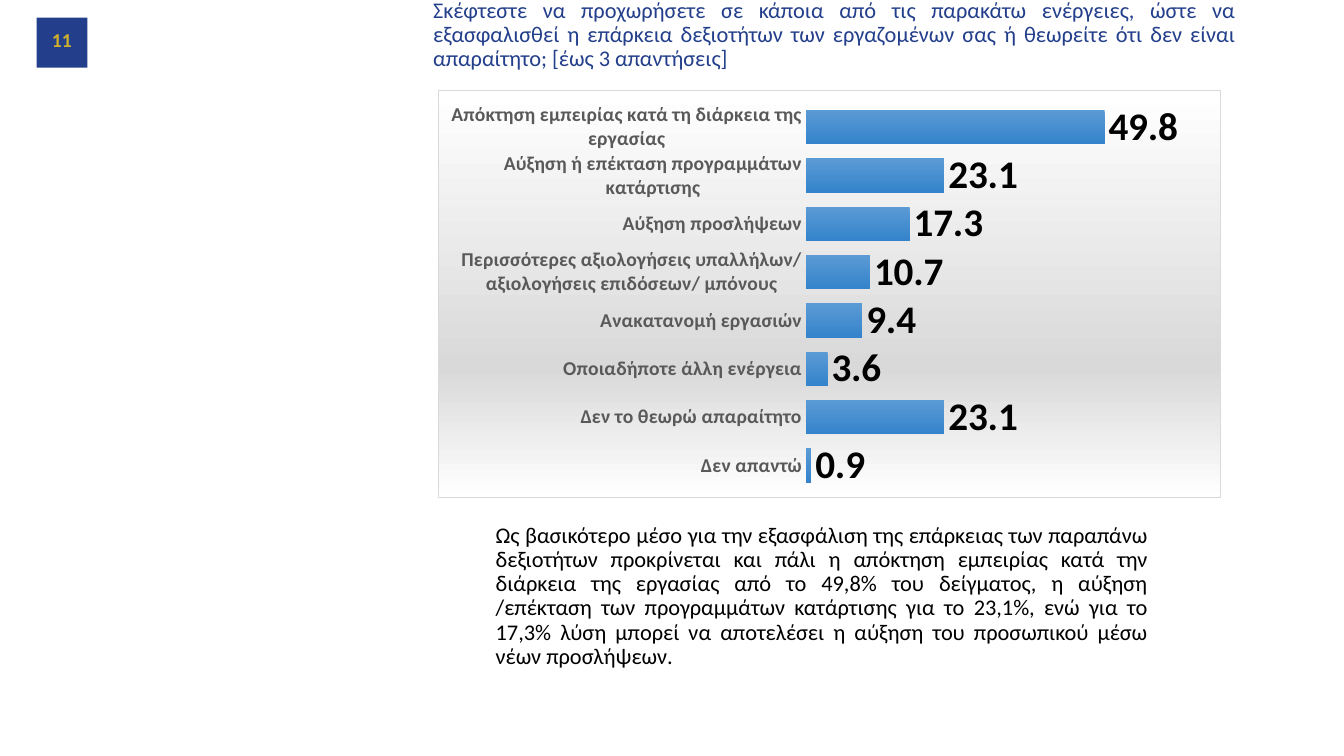
from dataclasses import dataclass

from lxml.etree import _Element
from pptx import Presentation
from pptx.chart.data import CategoryChartData
from pptx.dml.color import RGBColor
from pptx.enum.chart import XL_CHART_TYPE, XL_LABEL_POSITION, XL_TICK_MARK
from pptx.enum.shapes import MSO_SHAPE
from pptx.enum.text import MSO_ANCHOR, PP_ALIGN
from pptx.oxml import parse_xml
from pptx.oxml.ns import nsdecls, qn
from pptx.slide import Slide
from pptx.util import Pt


@dataclass(frozen=True)
class Theme:
    font: str = "Calibri"
    navy: str = "233F8C"
    gold: str = "CEB02C"
    black: str = "000000"
    axis_gray: str = "595959"
    panel_gray: str = "D9D9D9"
    white: str = "FFFFFF"
    bar_top: str = "5B9BD5"
    bar_bottom: str = "3483CB"
    text_size: float = 16
    number_size: float = 14
    chart_size: float = 10
    category_size: float = 14
    value_size: float = 28


@dataclass(frozen=True)
class Box:
    left: float
    top: float
    width: float
    height: float

    def lengths(self) -> tuple[Pt, Pt, Pt, Pt]:
        return Pt(self.left), Pt(self.top), Pt(self.width), Pt(self.height)


@dataclass(frozen=True)
class Answer:
    label: str
    percent: float


THEME = Theme()

NUMBER_SQUARE = Box(26.2, 12.7, 36.3, 35.6)
NUMBER_BOX = Box(27.4, 13.7, 31, 28.8)
TITLE_BOX = Box(302.4, 0, 587.5, 54.7)
CHART_BOX = Box(312.8, 64.4, 559.4, 291.6)
COMMENT_BOX = Box(347, 370.8, 480.2, 112.3)

TITLE = (
    "Σκέφτεστε να προχωρήσετε σε κάποια από τις παρακάτω ενέργειες, ώστε να "
    "εξασφαλισθεί η επάρκεια δεξιοτήτων των εργαζομένων σας ή θεωρείτε ότι δεν "
    "είναι απαραίτητο; [έως 3 απαντήσεις]"
)
COMMENT = (
    "Ως βασικότερο μέσο για την εξασφάλιση της επάρκειας των παραπάνω δεξιοτήτων "
    "προκρίνεται και πάλι η απόκτηση εμπειρίας κατά την διάρκεια της εργασίας από "
    "το 49,8% του δείγματος, η αύξηση /επέκταση των προγραμμάτων κατάρτισης για το "
    "23,1%, ενώ για το 17,3% λύση μπορεί να αποτελέσει η αύξηση του προσωπικού "
    "μέσω νέων προσλήψεων."
)
ANSWERS = (
    Answer("Δεν απαντώ", 0.9),
    Answer("Δεν το θεωρώ απαραίτητο", 23.1),
    Answer("Οποιαδήποτε άλλη ενέργεια", 3.6),
    Answer("Ανακατανομή εργασιών", 9.4),
    Answer("Περισσότερες αξιολογήσεις υπαλλήλων/ αξιολογήσεις επιδόσεων/ μπόνους", 10.7),
    Answer("Αύξηση προσλήψεων", 17.3),
    Answer("Αύξηση ή επέκταση προγραμμάτων κατάρτισης", 23.1),
    Answer("Απόκτηση εμπειρίας κατά τη διάρκεια της εργασίας", 49.8),
)


def format_font(font, size: float, color: str, bold: bool = False) -> None:
    font.name = THEME.font
    font.size = Pt(size)
    font.bold = bold
    font.color.rgb = RGBColor.from_string(color)


def add_text(slide: Slide, box: Box, text: str, *, size: float, color: str,
             bold: bool = False, align: PP_ALIGN = PP_ALIGN.JUSTIFY,
             anchor: MSO_ANCHOR = MSO_ANCHOR.TOP, line_spacing: float = 0.9) -> None:
    frame = slide.shapes.add_textbox(*box.lengths()).text_frame
    frame.word_wrap = True
    frame.vertical_anchor = anchor
    paragraph = frame.paragraphs[0]
    paragraph.alignment = align
    paragraph.line_spacing = line_spacing
    run = paragraph.add_run()
    run.text = text
    format_font(run.font, size, color, bold)


def add_number_square(slide: Slide) -> None:
    shape = slide.shapes.add_shape(MSO_SHAPE.RECTANGLE, *NUMBER_SQUARE.lengths())
    shape.shadow.inherit = False
    shape.fill.solid()
    shape.fill.fore_color.rgb = RGBColor.from_string(THEME.navy)
    shape.line.fill.background()


def gradient_properties(stops: dict[int, str], outline: str = "") -> _Element:
    """Chart shape properties: a downward gradient, stops keyed by percent."""
    stop_xml = "".join(
        f'<a:gs pos="{percent * 1000}"><a:srgbClr val="{color}"/></a:gs>'
        for percent, color in stops.items()
    )
    line_xml = (
        f'<a:ln w="{Pt(0.75)}"><a:solidFill><a:srgbClr val="{outline}"/></a:solidFill></a:ln>'
        if outline else "<a:ln><a:noFill/></a:ln>"
    )
    return parse_xml(
        f'<c:spPr {nsdecls("c", "a")}><a:gradFill><a:gsLst>{stop_xml}</a:gsLst>'
        f'<a:lin ang="5400000" scaled="0"/></a:gradFill>{line_xml}</c:spPr>'
    )


def set_plot_layout(plot_area: _Element, **fractions: float) -> None:
    """Place the inner plot area by fractions of the chart."""
    for layout in plot_area.findall(qn("c:layout")):
        plot_area.remove(layout)
    places = "".join(f'<c:{name} val="{value}"/>' for name, value in fractions.items())
    plot_area.insert(0, parse_xml(
        f'<c:layout {nsdecls("c")}><c:manualLayout><c:layoutTarget val="inner"/>'
        f'<c:xMode val="edge"/><c:yMode val="edge"/>{places}</c:manualLayout></c:layout>'
    ))


def add_answer_chart(slide: Slide) -> None:
    data = CategoryChartData(number_format="0.0")
    data.categories = [answer.label for answer in ANSWERS]
    data.add_series("Series 1", [answer.percent for answer in ANSWERS])
    chart = slide.shapes.add_chart(
        XL_CHART_TYPE.BAR_CLUSTERED, *CHART_BOX.lengths(), data
    ).chart
    chart.has_legend = False
    chart.has_title = False
    format_font(chart.font, THEME.chart_size, THEME.black)

    categories = chart.category_axis
    categories.major_tick_mark = XL_TICK_MARK.NONE
    categories.has_major_gridlines = False
    categories.format.line.fill.background()
    format_font(categories.tick_labels.font, THEME.category_size, THEME.axis_gray, True)

    values = chart.value_axis
    values.minimum_scale = 0
    values.maximum_scale = 60
    values.has_major_gridlines = False
    values.visible = False

    plot = chart.plots[0]
    plot.gap_width = 41
    plot.vary_by_categories = False
    plot.has_data_labels = True
    labels = plot.data_labels
    labels.show_value = True
    labels.position = XL_LABEL_POSITION.OUTSIDE_END
    format_font(labels.font, THEME.value_size, THEME.black, True)

    bars = plot.series[0].format.fill
    bars.gradient()
    bars.gradient_angle = 270
    for stop, color in zip(bars.gradient_stops, (THEME.bar_top, THEME.bar_bottom)):
        stop.color.rgb = RGBColor.from_string(color)

    chart_element = chart.element.find(qn("c:chart"))
    chart_element.addnext(gradient_properties(
        {0: THEME.white, 68: THEME.panel_gray, 100: THEME.white}, THEME.panel_gray
    ))
    set_plot_layout(chart_element.find(qn("c:plotArea")), x=0.47, y=0.03, w=0.46, h=0.95)


def main() -> None:
    presentation = Presentation()
    presentation.slide_width = Pt(960)
    presentation.slide_height = Pt(540)
    slide = presentation.slides.add_slide(presentation.slide_layouts[6])
    add_number_square(slide)
    add_text(slide, TITLE_BOX, TITLE, size=THEME.text_size, color=THEME.navy,
             anchor=MSO_ANCHOR.BOTTOM)
    add_text(slide, NUMBER_BOX, "11", size=THEME.number_size, color=THEME.gold, bold=True,
             align=PP_ALIGN.RIGHT, anchor=MSO_ANCHOR.MIDDLE, line_spacing=1)
    add_answer_chart(slide)
    add_text(slide, COMMENT_BOX, COMMENT, size=THEME.text_size, color=THEME.black)
    presentation.save("out.pptx")


if __name__ == "__main__":
    main()
